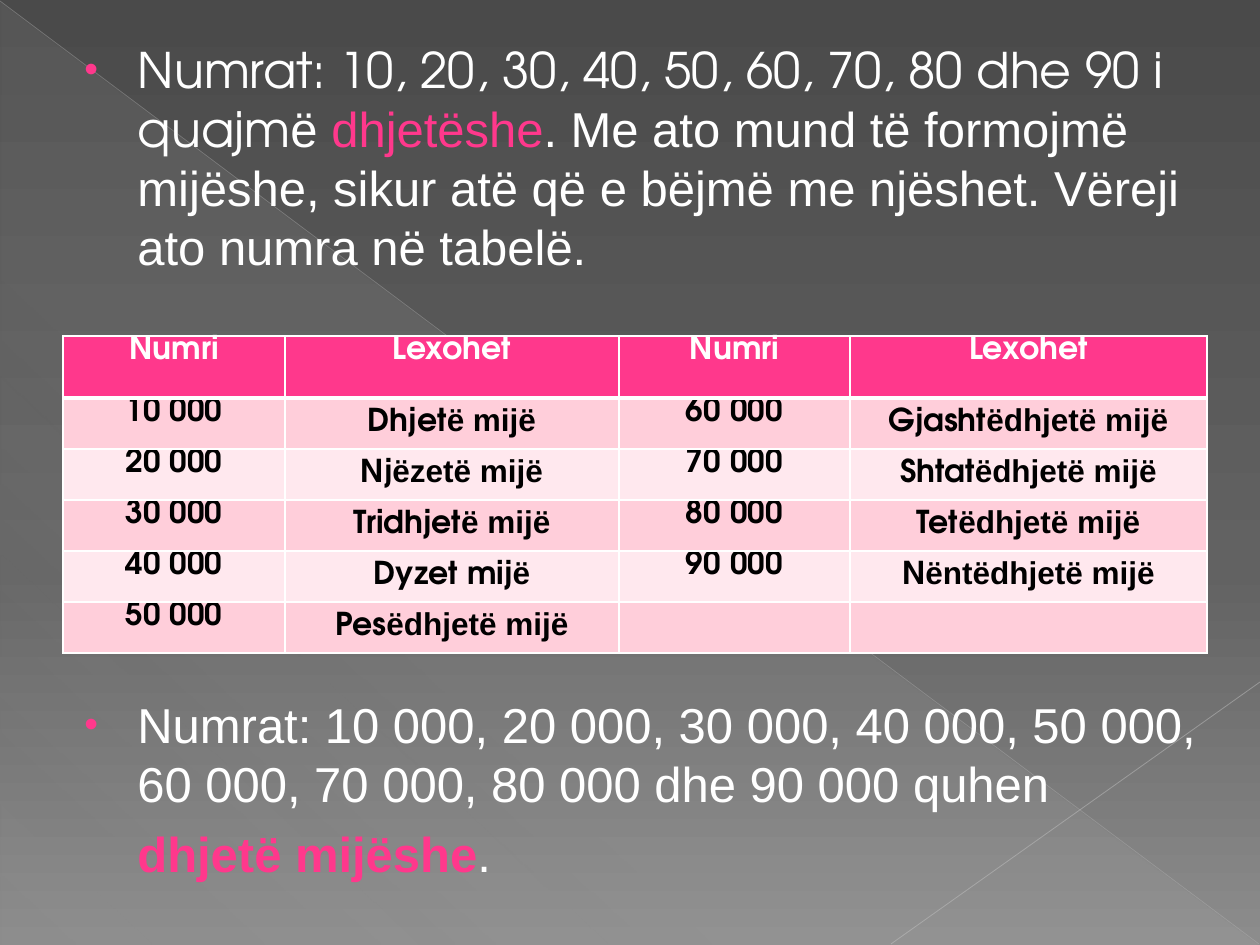
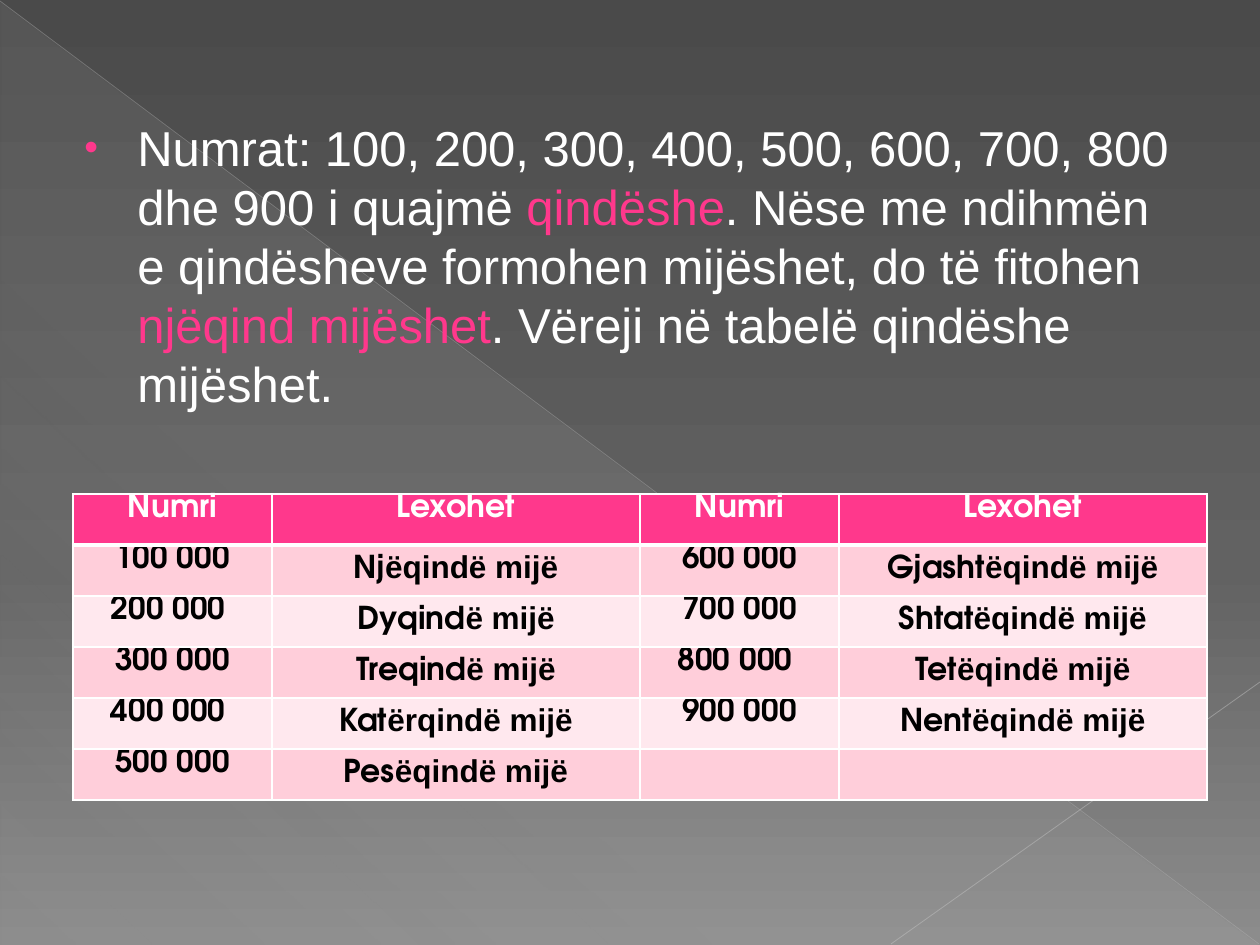
from lxml.etree import SubElement
from pptx import Presentation
from pptx.dml.color import RGBColor
from pptx.enum.shapes import MSO_CONNECTOR, MSO_SHAPE
from pptx.enum.text import PP_ALIGN
from pptx.oxml.ns import qn
from pptx.util import Emu, Pt

EMU_PER_PX = 914400 / 126
PINK, WHITE, BLACK = "FF388C", "FFFFFF", "000000"
BAND_FILLS = ("FFCEDA", "FFE8EE")
GEOMETRIC, PLAIN = "TeX Gyre Adventor", "Arial"
TEXT_INDENT, BULLET_HANG = 62, 53
HEADINGS = ("Numri", "Lexohet", "Numri", "Lexohet")

TEN_THOUSANDS = (
    ("10 000", "Dhjetë mijë", "60 000", "Gjashtëdhjetë mijë"),
    ("20 000", "Njëzetë mijë", "70 000", "Shtatëdhjetë mijë"),
    ("30 000", "Tridhjetë mijë", "80 000", "Tetëdhjetë mijë"),
    ("40 000", "Dyzet mijë", "90 000", "Nëntëdhjetë mijë"),
    ("50 000", "Pesëdhjetë mijë", "", ""),
)
HUNDRED_THOUSANDS = (
    ("100 000", "Njëqindë mijë", "600 000", "Gjashtëqindë mijë"),
    ("200 000 ", "Dyqindë mijë", "700 000", "Shtatëqindë mijë"),
    ("300 000", "Treqindë mijë", "800 000 ", "Tetëqindë mijë"),
    ("400 000 ", "Katërqindë mijë", "900 000", "Nentëqindë mijë"),
    ("500 000", "Pesëqindë mijë", "", ""),
)


def px(length):
    """Turn a length in px into EMU."""
    return Emu(round(length * EMU_PER_PX))


def colour(code):
    """Turn a hex string into a colour."""
    return RGBColor.from_string(code)


def set_gradient(owner, stops, angle):
    """Replace the solid fill inside owner by a linear gradient."""
    solid = owner.find(".//" + qn("a:solidFill"))
    gradient = solid.makeelement(qn("a:gradFill"), {"rotWithShape": "1"})
    solid.getparent().replace(solid, gradient)
    stop_list = SubElement(gradient, qn("a:gsLst"))
    for position, code, opacity in stops:
        stop = SubElement(stop_list, qn("a:gs"), pos=str(position * 1000))
        shade = SubElement(stop, qn("a:srgbClr"), val=code)
        SubElement(shade, qn("a:alpha"), val=str(opacity * 1000))
    SubElement(gradient, qn("a:lin"), ang=str(angle * 60000), scaled="0")


def add_diagonal(slide, start, end, code, width, opacity):
    """Draw a thin translucent line."""
    diagonal = slide.shapes.add_connector(
        MSO_CONNECTOR.STRAIGHT, *map(px, start + end))
    diagonal.line.color.rgb = colour(code)
    diagonal.line.width = Pt(width)
    properties = diagonal.element.spPr
    shade = properties.find(".//" + qn("a:srgbClr"))
    SubElement(shade, qn("a:alpha"), val=str(opacity * 1000))
    SubElement(properties, qn("a:effectLst"))


def add_backdrop_slide(deck):
    """Add a blank slide with the shared grey backdrop."""
    slide = deck.slides.add_slide(deck.slide_layouts[6])
    slide.background.fill.solid()
    set_gradient(slide.element.find(".//" + qn("p:bg")),
                 ((0, "4A4A4A", 100), (60, "626262", 100), (100, "8C8C8C", 100)), 90)
    sheen = slide.shapes.add_shape(
        MSO_SHAPE.RIGHT_TRIANGLE, px(1), px(2), px(1258), px(943))
    sheen.shadow.inherit = False
    sheen.fill.solid()
    set_gradient(sheen.element.spPr,
                 ((0, "D2D2D2", 10), (70, "D2D2D2", 8), (100, "D2D2D2", 1)), 133)
    sheen.line.fill.background()
    add_diagonal(slide, (0, 1), (1259, 944), "BFBFBF", 0.39, 35)
    add_diagonal(slide, (1260, 682), (891, 944), "C6C6C6", 0.47, 45)
    return slide


def add_run(paragraph, text, font=None, code=None, bold=None):
    """Append a run with only the font settings given."""
    run = paragraph.add_run()
    run.text = text
    if font:
        run.font.name = font
    if code:
        run.font.color.rgb = colour(code)
    if bold is not None:
        run.font.bold = bold


def add_split_runs(paragraph, text):
    """Write text in the geometric font up to its first ë, then in the plain one."""
    head, letter, rest = text.partition("ë")
    add_run(paragraph, head, GEOMETRIC)
    if letter:
        add_run(paragraph, letter + rest, PLAIN)


def add_statement_box(slide, top, width, height):
    """Add a wrapping text box in the body column and return its text frame."""
    frame = slide.shapes.add_textbox(px(63), px(top), px(width), px(height)).text_frame
    frame.word_wrap = True
    frame.margin_top = frame.margin_bottom = 0
    return frame


def style_statement(paragraph, bulleted=True):
    """Give a body paragraph its indent, bullet, spacing and font."""
    properties = paragraph._p.get_or_add_pPr()
    properties.set("marL", str(px(TEXT_INDENT)))
    properties.set("indent", str(px(-BULLET_HANG if bulleted else 0)))
    paragraph.line_spacing = Pt(33.7)
    if bulleted:
        SubElement(SubElement(properties, qn("a:buClr")), qn("a:srgbClr"), val=PINK)
        SubElement(properties, qn("a:buSzPct"), val="80000")
        SubElement(properties, qn("a:buFont"), typeface=PLAIN)
        SubElement(properties, qn("a:buChar"), char="•")
    paragraph.font.size = Pt(28)
    paragraph.font.name = PLAIN
    paragraph.font.color.rgb = colour(WHITE)


def set_borders(cell, widths):
    """Draw white borders on the left, right, top and bottom of a cell."""
    properties = cell._tc.get_or_add_tcPr()
    for side, width in zip("LRTB", widths):
        edge = SubElement(properties, qn(f"a:ln{side}"), w=str(Pt(width)))
        SubElement(SubElement(edge, qn("a:solidFill")), qn("a:srgbClr"), val=WHITE)


def fill_cell(cell, text, row, column):
    """Style and write one cell of a reading table."""
    is_heading = row == 0
    set_borders(cell, (1, 1, 3 if row == 1 else 1, 3 if is_heading else 1))
    cell.fill.solid()
    cell.fill.fore_color.rgb = colour(PINK if is_heading else BAND_FILLS[(row - 1) % 2])
    cell.margin_top = px(5 if column % 2 and not is_heading else 0)
    cell.margin_bottom = 0
    paragraph = cell.text_frame.paragraphs[0]
    paragraph.alignment = PP_ALIGN.CENTER
    paragraph.font.size = Pt(18)
    paragraph.font.bold = True
    paragraph.font.color.rgb = colour(WHITE if is_heading else BLACK)
    if text:
        add_split_runs(paragraph, text)


def add_reading_table(slide, left, top, widths, heading_height, readings):
    """Add a table of numbers and how they are read."""
    rows = (HEADINGS,) + readings
    heights = [heading_height] + [51] * len(readings)
    table = slide.shapes.add_table(
        len(rows), len(widths), px(left), px(top), px(sum(widths)), px(sum(heights))).table
    for column, width in zip(table.columns, widths):
        column.width = px(width)
    for row, height in zip(table.rows, heights):
        row.height = px(height)
    for r, texts in enumerate(rows):
        for c, text in enumerate(texts):
            fill_cell(table.cell(r, c), text, r, c)


def add_tens_slide(deck):
    """Build the slide on tens of thousands."""
    slide = add_backdrop_slide(deck)
    tens = add_statement_box(slide, 39, 1176, 240).paragraphs[0]
    style_statement(tens)
    add_split_runs(tens, "Numrat: 10, 20, 30, 40, 50, 60, 70, 80 dhe 90 i quajmë ")
    add_run(tens, "dhjetëshe", code=PINK)
    add_run(tens, ". Me ato mund të formojmë mijëshe, sikur atë që e bëjmë "
                  "me njëshet. Vëreji ato numra në tabelë.")
    add_reading_table(slide, 63, 336, (222, 334, 231, 357), 62, TEN_THOUSANDS)
    summary = add_statement_box(slide, 694, 1176, 200)
    numbers = summary.paragraphs[0]
    style_statement(numbers)
    add_run(numbers, "Numrat: 10 000, 20 000, 30 000, 40 000, 50 000, "
                     "60 000, 70 000, 80 000 dhe 90 000 quhen")
    name = summary.add_paragraph()
    name.space_before = Pt(6.7)
    style_statement(name, bulleted=False)
    add_run(name, "dhjetë mijëshe", code=PINK, bold=True)
    add_run(name, ".")


def add_hundreds_slide(deck):
    """Build the slide on hundreds of thousands."""
    slide = add_backdrop_slide(deck)
    hundreds = add_statement_box(slide, 117, 1134, 300).paragraphs[0]
    style_statement(hundreds)
    for text, code in (
            ("Numrat: 100, 200, 300, 400, 500, 600, 700, 800 dhe 900 i quajmë ", None),
            ("qindëshe", PINK),
            (". Nëse me ndihmën e qindësheve formohen mijëshet, do të fitohen ", None),
            ("njëqind mijëshet", PINK),
            (". Vëreji në tabelë qindëshe mijëshet.", None)):
        add_run(hundreds, text, code=code)
    add_reading_table(slide, 73, 494, (199, 368) * 2, 51, HUNDRED_THOUSANDS)


def main():
    """Build and save the deck."""
    deck = Presentation()
    deck.slide_width, deck.slide_height = px(1260), px(945)
    add_tens_slide(deck)
    add_hundreds_slide(deck)
    deck.save("out.pptx")


if __name__ == "__main__":
    main()
